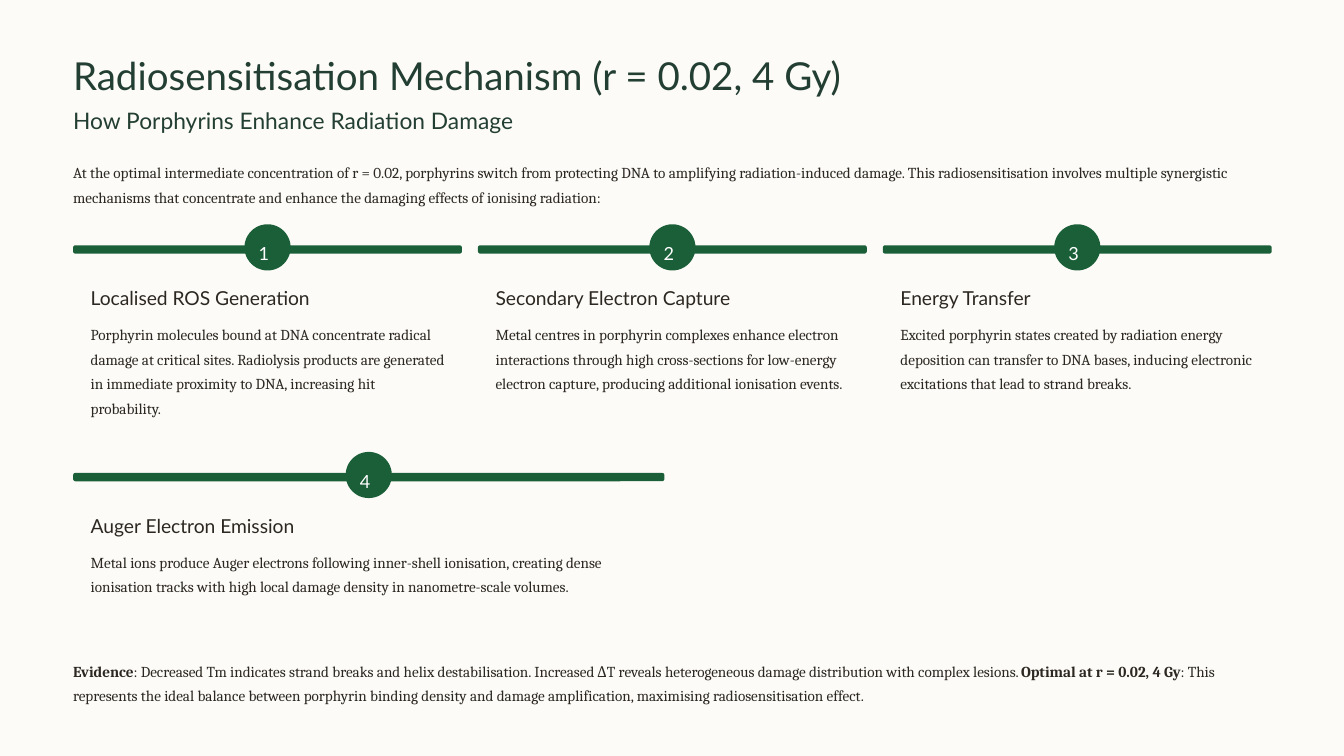
from pptx import Presentation
from pptx import util as u
from pptx.dml import color
from pptx.enum import shapes, text

COLORS = {"paper": "FCFBF8", "title": "233E32", "ink": "2C2821", "green": "1B5F39", "white": "FFFFFF"}
LEFT, FULL_WIDTH = 0.87, 14.27
CARD_WIDTH, WIDE_WIDTH, CARD_PITCH = 4.63, 7.04, 4.82
BADGE, INSET = 0.55, 0.21
FIRST_ROW, SECOND_ROW = 2.92, 5.63

MECHANISMS = [
    ("Localised ROS Generation",
     "Porphyrin molecules bound at DNA concentrate radical damage at critical sites. Radiolysis products "
     "are generated in immediate proximity to DNA, increasing hit probability."),
    ("Secondary Electron Capture",
     "Metal centres in porphyrin complexes enhance electron interactions through high cross-sections for "
     "low-energy electron capture, producing additional ionisation events."),
    ("Energy Transfer",
     "Excited porphyrin states created by radiation energy deposition can transfer to DNA bases, inducing "
     "electronic excitations that lead to strand breaks."),
    ("Auger Electron Emission",
     "Metal ions produce Auger electrons following inner-shell ionisation, creating dense ionisation tracks "
     "with high local damage density in nanometre-scale volumes."),
]


class SlideBuilder:
    """Draws styled elements on the current slide."""

    def __init__(self, page):
        self.page = page
        fill = page.background.fill
        fill.solid()
        fill.fore_color.rgb = self.rgb("paper")

    def rgb(self, name):
        return color.RGBColor.from_string(COLORS[name])

    def text_box(self, left, top, width, height, spans, size, spacing, font, ink, wrap=False):
        box = self.page.shapes.add_textbox(*map(u.Inches, (left, top, width, height)))
        frame = box.text_frame
        frame.word_wrap = wrap
        frame.margin_left = frame.margin_right = frame.margin_top = frame.margin_bottom = 0
        para = frame.paragraphs[0]
        para.alignment = text.PP_ALIGN.LEFT
        para.line_spacing = u.Pt(spacing)
        for words, bold in spans:
            span = para.add_run()
            span.text = words
            span.font.name = font
            span.font.size = u.Pt(size)
            span.font.bold = bold
            span.font.color.rgb = self.rgb(ink)

    def label(self, left, top, width, height, words, size, spacing, ink):
        self.text_box(left, top, width, height, [(words, False)], size, spacing, "Lato", ink)

    def body(self, left, top, width, height, *spans):
        self.text_box(left, top, width, height, spans, 13, 21, "Cambria", "ink", wrap=True)

    def shape(self, kind, left, top, width, height):
        shape = self.page.shapes.add_shape(kind, *map(u.Inches, (left, top, width, height)))
        shape.shadow.inherit = False
        shape.fill.solid()
        shape.fill.fore_color.rgb = self.rgb("green")
        shape.line.fill.background()
        return shape

    def card(self, number, left, top, width, heading, words):
        bar = self.shape(shapes.MSO_SHAPE.ROUNDED_RECTANGLE, left, top, width, 0.1)
        bar.adjustments[0] = 0.28
        badge_left = left + (width - BADGE) / 2
        self.shape(shapes.MSO_SHAPE.OVAL, badge_left, top - 0.25, BADGE, BADGE)
        self.label(badge_left + 0.17, top - 0.12, 0.22, 0.28, str(number), 15.5, 25, "white")
        text_width = width - 2 * INSET
        self.label(left + INSET, top + 0.48, text_width, 0.29, heading, 16.5, 20.5, "ink")
        self.body(left + INSET, top + 0.88, text_width, 1.18, (words, False))


def main():
    deck = Presentation()
    deck.slide_width, deck.slide_height = u.Inches(16), u.Inches(9)
    slide = SlideBuilder(deck.slides.add_slide(deck.slide_layouts[6]))

    slide.label(LEFT, 0.6, 9.23, 0.58, "Radiosensitisation Mechanism (r = 0.02, 4 Gy)", 33, 41, "title")
    slide.label(LEFT, 1.25, 5.46, 0.35, "How Porphyrins Enhance Radiation Damage", 19.5, 24.5, "title")
    slide.body(LEFT, 1.87, FULL_WIDTH, 0.59, (
        "At the optimal intermediate concentration of r = 0.02, porphyrins switch from protecting DNA to "
        "amplifying radiation-induced damage. This radiosensitisation involves multiple synergistic "
        "mechanisms that concentrate and enhance the damaging effects of ionising radiation:", False))

    places = [(LEFT + column * CARD_PITCH, FIRST_ROW, CARD_WIDTH) for column in range(3)]
    places.append((LEFT, SECOND_ROW, WIDE_WIDTH))
    for number, (place, mechanism) in enumerate(zip(places, MECHANISMS), 1):
        slide.card(number, *place, *mechanism)

    slide.body(
        LEFT, 7.81, FULL_WIDTH, 0.59,
        ("Evidence", True),
        (": Decreased Tm indicates strand breaks and helix destabilisation. Increased ΔT reveals "
         "heterogeneous damage distribution with complex lesions. ", False),
        ("Optimal at r = 0.02, 4 Gy", True),
        (": This represents the ideal balance between porphyrin binding density and damage amplification, "
         "maximising radiosensitisation effect.", False))
    deck.save("out.pptx")


if __name__ == "__main__":
    main()
